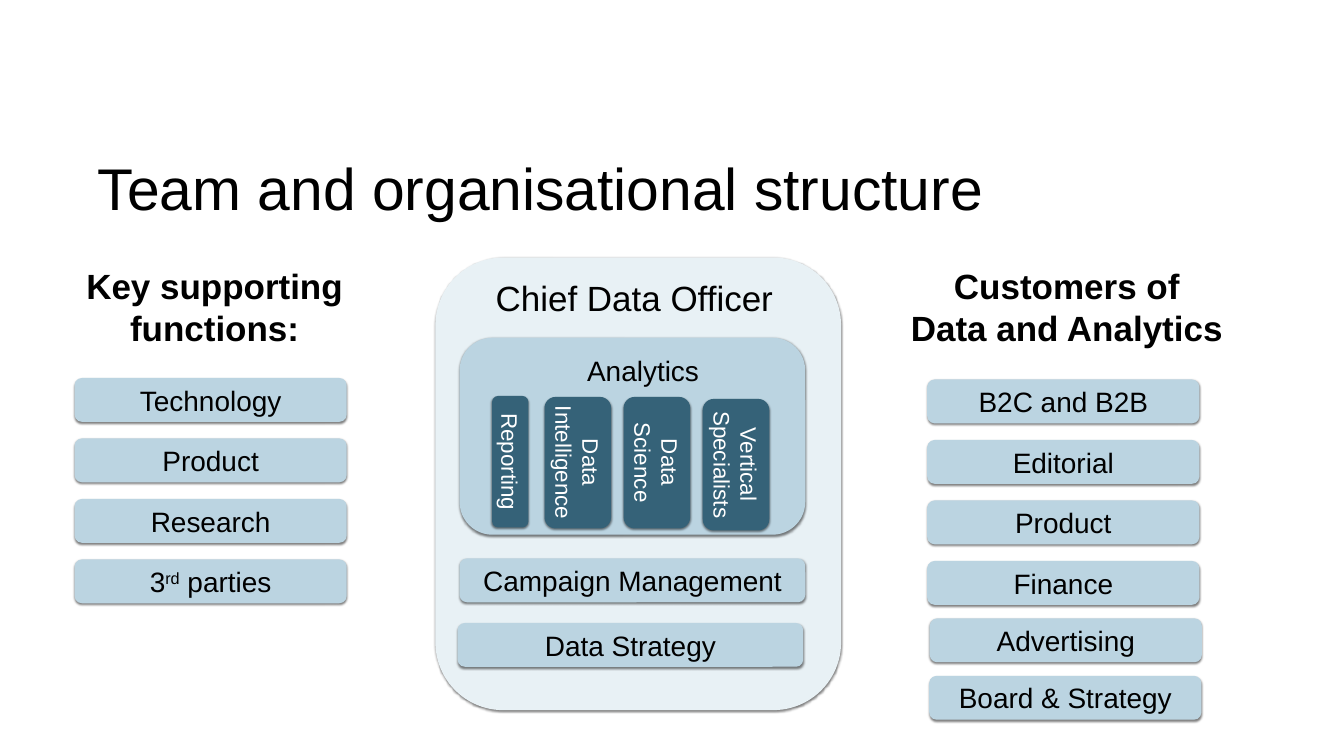
import pptx
import pptx.util
import pptx.dml.color
import pptx.enum.shapes
import pptx.enum.text
import lxml.etree
import pptx.oxml.ns

PX = 9144  # EMU per px, 100 px to the inch
PALE, LIGHT, DARK = "E8F1F5", "BBD4E1", "356278"
BLACK, WHITE = "000000", "FFFFFF"
ALIGN = pptx.enum.text.PP_ALIGN


def emu(*sizes):
    return [size * PX for size in sizes]


def color(code):
    return pptx.dml.color.RGBColor.from_string(code)


def shade(shape):
    """Soft shadow straight below the shape."""
    shape.shadow.inherit = False
    effects = shape._element.spPr.find(pptx.oxml.ns.qn("a:effectLst"))
    outer = lxml.etree.SubElement(
        effects, pptx.oxml.ns.qn("a:outerShdw"),
        blurRad="38100", dist="25400", dir="5400000", rotWithShape="0")
    black = lxml.etree.SubElement(
        outer, pptx.oxml.ns.qn("a:srgbClr"), val=BLACK)
    lxml.etree.SubElement(black, pptx.oxml.ns.qn("a:alpha"), val="50000")


def write(shape, lines, size, ink=BLACK, bold=False,
          align=ALIGN.CENTER, inset=6, wrap=True):
    """Fill a shape with lines; text between ^ marks is superscript."""
    frame = shape.text_frame
    frame.word_wrap = wrap
    frame.vertical_anchor = pptx.enum.text.MSO_ANCHOR.MIDDLE
    frame.margin_left = frame.margin_right = inset * PX
    frame.margin_top = frame.margin_bottom = inset * PX
    for i, line in enumerate(lines.split("\n")):
        para = frame.add_paragraph() if i else frame.paragraphs[0]
        para.alignment = align
        font = para.font
        font.name, font.size, font.bold = "Arial", pptx.util.Pt(size), bold
        font.color.rgb = color(ink)
        for j, part in enumerate(line.split("^")):
            run = para.add_run()
            run.text = part
            if j % 2:
                run._r.get_or_add_rPr().set("baseline", "30000")


def label(parent, box, lines, size, **style):
    shape = parent.shapes.add_textbox(*emu(*box))
    write(shape, lines, size, **style)


def panel(parent, box, fill):
    shape = parent.shapes.add_shape(
        pptx.enum.shapes.MSO_SHAPE.ROUNDED_RECTANGLE, *emu(*box))
    shape.fill.solid()
    shape.fill.fore_color.rgb = color(fill)
    shape.line.fill.background()
    shade(shape)
    return shape


def bar(parent, left, top, text, width=540):
    write(panel(parent, (left, top, width, 87), LIGHT), text, 40)


def pillar(parent, mid, top, width, text):
    """Upright box: a flat one turned by a quarter."""
    long = 261
    box = (mid - long // 2, top + (long - width) // 2, long, width)
    shape = panel(parent, box, DARK)
    shape.rotation = 90
    write(shape, text, 32, ink=WHITE)


def stack(parent, left, top, names):
    for i, name in enumerate(names):
        bar(parent, left, top + 120 * i, name)


def main():
    deck = pptx.Presentation()
    deck.slide_width, deck.slide_height = emu(2667, 1500)
    slide = deck.slides.add_slide(deck.slide_layouts[6])

    # Title
    label(slide, (194, 297, 2281, 148), "Team and organisational structure",
          84, align=ALIGN.LEFT, inset=0)

    # Data office
    office = slide.shapes.add_group_shape()
    panel(office, (864, 511, 805, 898), PALE)
    label(office, (975, 543, 568, 95), "Chief Data Officer", 50, wrap=False)
    panel(office, (912, 670, 686, 391), LIGHT)
    label(office, (1158, 696, 236, 79), "Analytics", 40, wrap=False)
    pillar(office, 1012, 786, 72, "Reporting")
    for i, (top, text) in enumerate([(788, "Data\nIntelligence"),
                                     (788, "Data\nScience"),
                                     (792, "Vertical\nSpecialists")]):
        pillar(office, 1146 + 157 * i, top, 132, text)
    bar(office, 912, 1108, "Campaign Management", 686)
    bar(office, 908, 1236, "Data Strategy", 686)

    # Supporting functions
    support = slide.shapes.add_group_shape()
    stack(support, 148, 750,
          ["Technology", "Product", "Research", "3^rd^ parties"])
    label(support, (164, 518, 524, 180), "Key supporting functions:", 50,
          bold=True)

    # Customers
    clients = slide.shapes.add_group_shape()
    label(clients, (1787, 518, 660, 180),
          "Customers of\nData and Analytics", 50, bold=True)
    stack(clients, 1840, 753,
          ["B2C and B2B", "Editorial", "Product", "Finance"])
    bar(clients, 1845, 1227, "Advertising")
    bar(clients, 1844, 1341, "Board & Strategy")

    deck.save("out.pptx")


if __name__ == "__main__":
    main()
